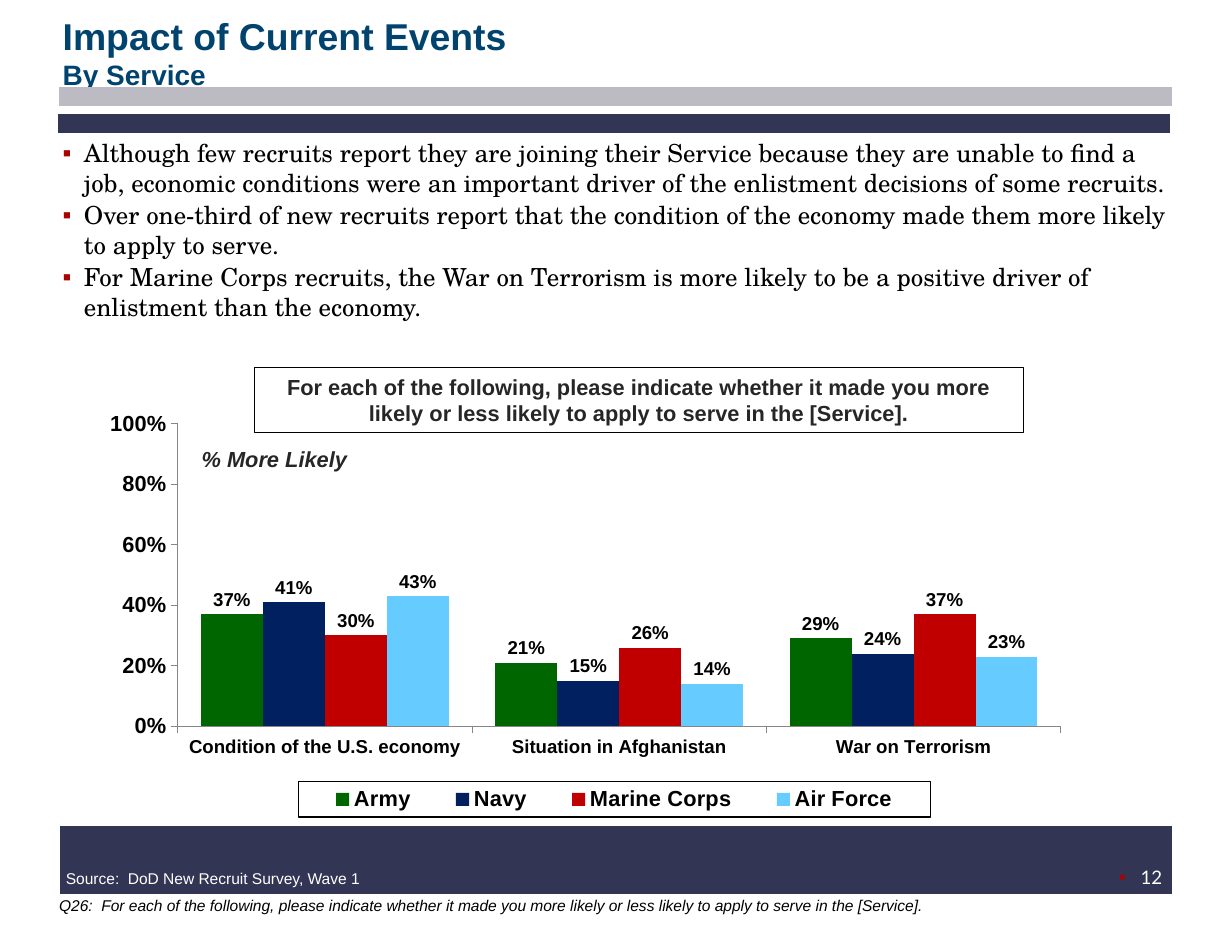
from lxml import etree
from pptx import Presentation
from pptx.chart.data import CategoryChartData
from pptx.dml.color import RGBColor
from pptx.enum.chart import XL_CHART_TYPE, XL_LABEL_POSITION, XL_LEGEND_POSITION, XL_TICK_MARK
from pptx.enum.shapes import MSO_CONNECTOR, MSO_SHAPE
from pptx.enum.text import MSO_ANCHOR, MSO_AUTO_SIZE, PP_ALIGN
from pptx.oxml import parse_xml
from pptx.oxml.ns import nsdecls, qn
from pptx.util import Inches, Pt

COLORS = {
    "black": "000000", "white": "FFFFFF", "dark": "262626", "title": "00436E",
    "bullet": "AB0101", "gray": "BCBAC2", "navy": "323554", "axis": "868686",
}
SERVICES = {
    "Army": ("006600", (0.37, 0.21, 0.29)),
    "Navy": ("002060", (0.41, 0.15, 0.24)),
    "Marine Corps": ("C00000", (0.30, 0.26, 0.37)),
    "Air Force": ("66CCFF", (0.43, 0.14, 0.23)),
}
EVENTS = ["Condition of the U.S. economy", "Situation in Afghanistan", "War on Terrorism"]
FINDINGS = [
    "Although few recruits report they are joining their Service because they are unable to find "
    "a job, economic conditions were an important driver of the enlistment decisions of some recruits.",
    "Over one-third of new recruits report that the condition of the economy made them more likely "
    "to apply to serve.",
    "For Marine Corps recruits, the War on Terrorism is more likely to be a positive driver of "
    "enlistment than the economy.",
]
QUESTION = ("For each of the following, please indicate whether it made you more likely or less "
            "likely to apply to serve in the [Service].")


def rgb(name):
    return RGBColor.from_string(COLORS.get(name, name))


def set_font(font, size, color="black", name="Arial", bold=False, italic=False):
    font.size, font.name, font.bold, font.italic = Pt(size), name, bold, italic
    font.color.rgb = rgb(color)


def add_bullet(paragraph):
    props = paragraph._p.get_or_add_pPr()
    props.set("marL", str(Inches(0.19)))
    props.set("indent", str(-Inches(0.19)))
    color = etree.SubElement(props, qn("a:buClr"))
    etree.SubElement(color, qn("a:srgbClr"), val=COLORS["bullet"])
    etree.SubElement(props, qn("a:buFont"), typeface="Arial")
    etree.SubElement(props, qn("a:buChar"), char="▪")


def write(shape, lines, sizes, align=PP_ALIGN.LEFT, anchor=MSO_ANCHOR.TOP, inset=(0.1, 0.05),
          bullet=False, gap=0, wrap=True, **font):
    """Fill a shape with one paragraph per line; the sizes repeat in turn."""
    frame = shape.text_frame
    frame.auto_size, frame.word_wrap, frame.vertical_anchor = MSO_AUTO_SIZE.NONE, wrap, anchor
    frame.margin_left = frame.margin_right = Inches(inset[0])
    frame.margin_top = frame.margin_bottom = Inches(inset[1])
    for i, line in enumerate(lines):
        paragraph = frame.paragraphs[0] if i == 0 else frame.add_paragraph()
        if i and gap:
            paragraph.space_before = Pt(gap)
        if bullet:
            add_bullet(paragraph)
        paragraph.alignment = align
        run = paragraph.add_run()
        run.text = line
        set_font(run.font, sizes[i % len(sizes)], **font)


def add_text(slide, box, text, size, **style):
    lines = [text] if isinstance(text, str) else text
    write(slide.shapes.add_textbox(*map(Inches, box)), lines, [size], **style)


def add_band(slide, left, y, width, weight, color):
    band = slide.shapes.add_connector(
        MSO_CONNECTOR.STRAIGHT, Inches(left), Inches(y), Inches(left + width), Inches(y))
    band.line.width = Pt(weight)
    band.line.color.rgb = rgb(color)
    etree.SubElement(band._element.spPr, qn("a:effectLst"))


def add_header(slide, left, top, width):
    add_band(slide, left + 0.03, top + 0.68, width - 0.12, 12, "gray")
    add_band(slide, left + 0.02, top + 0.92, width - 0.12, 12, "navy")
    title = slide.shapes.title
    title.left, title.top, title.width, title.height = map(Inches, (left, top, width, 0.57))
    write(title, ["Impact of Current Events", "By Service"], [24, 18], color="title", bold=True,
          anchor=MSO_ANCHOR.MIDDLE, inset=(0.06, 0.06))


def add_footer(slide, left, top, width):
    add_band(slide, left + 0.05, top, width - 0.08, 44, "navy")
    add_text(slide, (left, top + 0.03, 5.5, 0.27), "Source:  DoD New Recruit Survey, Wave 1", 10,
             color="white")
    add_text(slide, (left - 0.06, top + 0.27, width, 0.27), "Q26:  " + QUESTION, 10, italic=True)
    add_text(slide, (left + 9.11, top, 1.17, 0.58), "12", 12, color="white", name="Lato",
             align=PP_ALIGN.CENTER, bullet=True)


def place_part(part, index, x, y, w, h, inner=False):
    """Fix a chart part at fractions of the chart's width and height."""
    for old in part.findall(qn("c:layout")):
        part.remove(old)
    target = '<c:layoutTarget val="inner"/>' if inner else ""
    sizes = "".join(f'<c:{tag} val="{value}"/>' for tag, value in zip("xywh", (x, y, w, h)))
    part.insert(index, parse_xml(
        f'<c:layout {nsdecls("c")}><c:manualLayout>{target}<c:xMode val="edge"/>'
        f'<c:yMode val="edge"/>{sizes}</c:manualLayout></c:layout>'))


def style_axis(axis, size):
    axis.has_major_gridlines = False
    axis.major_tick_mark, axis.minor_tick_mark = XL_TICK_MARK.OUTSIDE, XL_TICK_MARK.NONE
    axis.format.line.color.rgb = rgb("axis")
    axis.format.line.width = Pt(0.75)
    set_font(axis.tick_labels.font, size, bold=True)


def add_legend(chart):
    chart.has_legend = True
    legend = chart.legend
    legend.position = XL_LEGEND_POSITION.BOTTOM
    legend.include_in_layout = False
    set_font(legend.font, 14, bold=True)
    place_part(legend._element, 1, 0.2, 0.86, 0.63, 0.07)
    border = parse_xml(
        f'<c:spPr {nsdecls("c", "a")}><a:ln w="{Pt(0.75)}"><a:solidFill>'
        f'<a:srgbClr val="{COLORS["black"]}"/></a:solidFill></a:ln></c:spPr>')
    legend._element.find(qn("c:txPr")).addprevious(border)


def add_service_chart(slide, left, top, width, height):
    data = CategoryChartData(number_format="0%")
    data.categories = EVENTS
    for service, (_, shares) in SERVICES.items():
        data.add_series(service, shares)
    chart = slide.shapes.add_chart(
        XL_CHART_TYPE.COLUMN_CLUSTERED, *map(Inches, (left, top, width, height)), data).chart
    chart.has_title = False
    set_font(chart.font, 18, name="Times New Roman")
    place_part(chart._chartSpace.chart.plotArea, 0, 0.08, 0.15, 0.88, 0.6, inner=True)

    style_axis(chart.category_axis, 12)
    share_axis = chart.value_axis
    style_axis(share_axis, 14)
    share_axis.minimum_scale, share_axis.maximum_scale, share_axis.major_unit = 0, 1, 0.2
    share_axis.tick_labels.number_format = "0%"
    share_axis.tick_labels.number_format_is_linked = False

    plot = chart.plots[0]
    plot.gap_width, plot.overlap, plot.vary_by_categories = 75, 0, False
    for bars, (color, _) in zip(plot.series, SERVICES.values()):
        bars.format.fill.solid()
        bars.format.fill.fore_color.rgb = rgb(color)
        labels = bars.data_labels
        labels.show_value, labels.position = True, XL_LABEL_POSITION.OUTSIDE_END
        labels.number_format, labels.number_format_is_linked = "0%", False
        set_font(labels.font, 12, bold=True)
    add_legend(chart)

    question = slide.shapes.add_shape(
        MSO_SHAPE.RECTANGLE, *map(Inches, (left + 1.4, top + 0.17, 6.87, 0.58)))
    question.shadow.inherit = False
    question.fill.background()
    question.line.color.rgb = rgb("black")
    question.line.width = Pt(0.75)
    label_style = dict(color="dark", bold=True, inset=(0.11, 0.06))
    write(question, [QUESTION], [14], align=PP_ALIGN.CENTER, anchor=MSO_ANCHOR.MIDDLE, **label_style)
    add_text(slide, (left + 0.82, top + 0.81, 2.28, 0.35), "% More Likely", 14, italic=True,
             **label_style)


def main():
    deck = Presentation()
    deck.slide_width, deck.slide_height = Inches(11), Inches(8.5)
    slide = deck.slides.add_slide(deck.slide_layouts[5])
    add_header(slide, 0.5, 0.18, 10.05)
    add_text(slide, (0.5, 1.17, 10, 0.97), FINDINGS, 16, name="TeX Gyre Schola",
             inset=(0.06, 0.06), bullet=True, gap=1.6)
    add_service_chart(slide, 0.87, 3.11, 8.96, 4.5)
    add_footer(slide, 0.49, 7.68, 10)
    deck.save("out.pptx")


if __name__ == "__main__":
    main()
